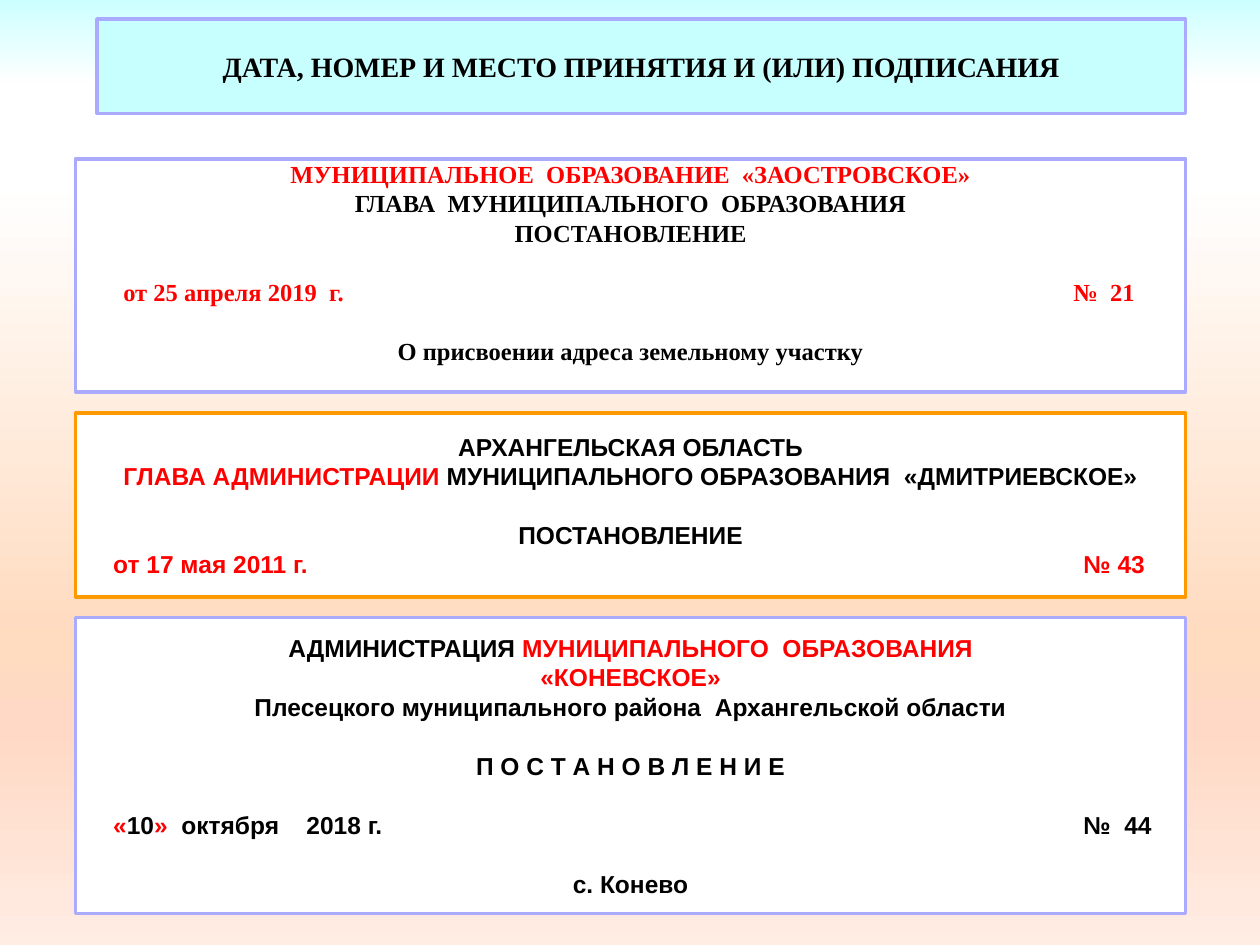
from dataclasses import dataclass

from lxml.etree import SubElement
from pptx import Presentation
from pptx.dml.color import RGBColor
from pptx.enum.shapes import MSO_SHAPE
from pptx.enum.text import MSO_ANCHOR, PP_ALIGN
from pptx.oxml.ns import qn
from pptx.util import Inches, Pt

COLORS = {
    "black": "000000", "red": "FF0000", "white": "FFFFFF",
    "cyan": "C7FFFF", "lavender": "AAAAFF", "orange": "FF9900",
}
BACKGROUND_STOPS = [(0, "CCFFFF"), (9, "FFFFFF"), (19, "FFFFFF"),
                    (68, "FFDBBF"), (77, "FFD9C5"), (100, "FFECE3")]
SERIF, SANS = "Times New Roman", "Arial"
BLANK_LINE = 16.9  # points, the height of one skipped line


@dataclass
class Line:
    spans: list[tuple[str, str]]  # text and colour name
    gap: float = 0  # skipped lines above
    tabs: tuple[float, ...] = ()  # inches from the text edge


@dataclass
class Panel:
    left: float
    top: float
    width: float
    height: float
    lines: list[Line]
    font: str = SANS
    size: float = 14
    fill: str = "white"
    border: str = "lavender"
    anchor: MSO_ANCHOR = MSO_ANCHOR.MIDDLE
    inset: float = 0.05


def rgb(name: str) -> RGBColor:
    return RGBColor.from_string(COLORS[name])


def add_span(para, text: str, *, font: str, size: float, color: str) -> None:
    span = para.add_run()
    span.text = text
    span.font.name = font
    span.font.size = Pt(size)
    span.font.bold = True
    span.font.color.rgb = rgb(color)


def add_tabs(para, positions: tuple[float, ...]) -> None:
    tab_list = SubElement(para._p.get_or_add_pPr(), qn("a:tabLst"))
    for position in positions:
        SubElement(tab_list, qn("a:tab"), pos=str(Inches(position)), algn="l")


def add_panel(page, panel: Panel) -> None:
    box = page.shapes.add_shape(
        MSO_SHAPE.RECTANGLE, Inches(panel.left), Inches(panel.top),
        Inches(panel.width), Inches(panel.height))
    box.shadow.inherit = False
    box.fill.solid()
    box.fill.fore_color.rgb = rgb(panel.fill)
    box.line.color.rgb = rgb(panel.border)
    box.line.width = Pt(2)
    frame = box.text_frame
    frame.word_wrap = True
    frame.vertical_anchor = panel.anchor
    frame.margin_top = frame.margin_bottom = Inches(panel.inset)
    for index, line in enumerate(panel.lines):
        para = frame.add_paragraph() if index else frame.paragraphs[0]
        para.alignment = PP_ALIGN.LEFT if line.tabs else PP_ALIGN.CENTER
        para.space_before = Pt(line.gap * BLANK_LINE)
        if line.tabs:
            add_tabs(para, line.tabs)
        for text, color in line.spans:
            add_span(para, text, font=panel.font, size=panel.size, color=color)


def paint_background(page) -> None:
    fill = page.background.fill
    fill.gradient()
    fill.gradient_angle = 270
    stop_list = page.element.find(".//" + qn("a:gsLst"))
    for stop in list(stop_list):
        stop_list.remove(stop)
    for percent, color in BACKGROUND_STOPS:
        stop = SubElement(stop_list, qn("a:gs"), pos=str(percent * 1000))
        SubElement(stop, qn("a:srgbClr"), val=color)


TITLE = Panel(0.77, 0.15, 8.64, 0.75, [
    Line([("ДАТА, НОМЕР И МЕСТО ПРИНЯТИЯ И (ИЛИ) ПОДПИСАНИЯ", "black")]),
], font=SERIF, size=16, fill="cyan")

ZAOSTROVSKOE = Panel(0.6, 1.26, 8.81, 1.85, [
    Line([("МУНИЦИПАЛЬНОЕ  ОБРАЗОВАНИЕ  «ЗАОСТРОВСКОЕ»", "red")]),
    Line([("ГЛАВА  МУНИЦИПАЛЬНОГО  ОБРАЗОВАНИЯ", "black")]),
    Line([("ПОСТАНОВЛЕНИЕ", "black")]),
    Line([("\tот 25 апреля 2019  г.\t№  21", "red")], gap=1, tabs=(0.28, 7.82)),
    Line([("О присвоении адреса земельному участку", "black")], gap=1),
], font=SERIF, anchor=MSO_ANCHOR.TOP, inset=0)

DMITRIEVSKOE = Panel(0.6, 3.28, 8.81, 1.46, [
    Line([("АРХАНГЕЛЬСКАЯ ОБЛАСТЬ", "black")]),
    Line([("ГЛАВА АДМИНИСТРАЦИИ ", "red"),
          ("МУНИЦИПАЛЬНОГО ОБРАЗОВАНИЯ  «ДМИТРИЕВСКОЕ»", "black")]),
    Line([("ПОСТАНОВЛЕНИЕ", "black")], gap=1),
    Line([("\tот 17 мая 2011 г.\t№ 43", "red")], tabs=(0.2, 7.9)),
], border="orange")

KONEVSKOE = Panel(0.6, 4.9, 8.81, 2.35, [
    Line([("АДМИНИСТРАЦИЯ ", "black"),
          ("МУНИЦИПАЛЬНОГО  ОБРАЗОВАНИЯ", "red")]),
    Line([("«КОНЕВСКОЕ»", "red")]),
    Line([("Плесецкого муниципального района  Архангельской области", "black")]),
    Line([("П О С Т А Н О В Л Е Н И Е", "black")], gap=1),
    Line([("\t«", "red"), ("10", "black"), ("»", "red"),
          ("  октября    2018 г.\t№  44", "black")], gap=1, tabs=(0.2, 7.9)),
    Line([("с. Конево", "black")], gap=1),
])


def main() -> None:
    deck = Presentation()
    deck.slide_width, deck.slide_height = Inches(10), Inches(7.5)
    page = deck.slides.add_slide(deck.slide_layouts[6])
    paint_background(page)
    # Heading, then the three sample documents
    for panel in (TITLE, ZAOSTROVSKOE, DMITRIEVSKOE, KONEVSKOE):
        add_panel(page, panel)
    deck.save("out.pptx")


if __name__ == "__main__":
    main()
